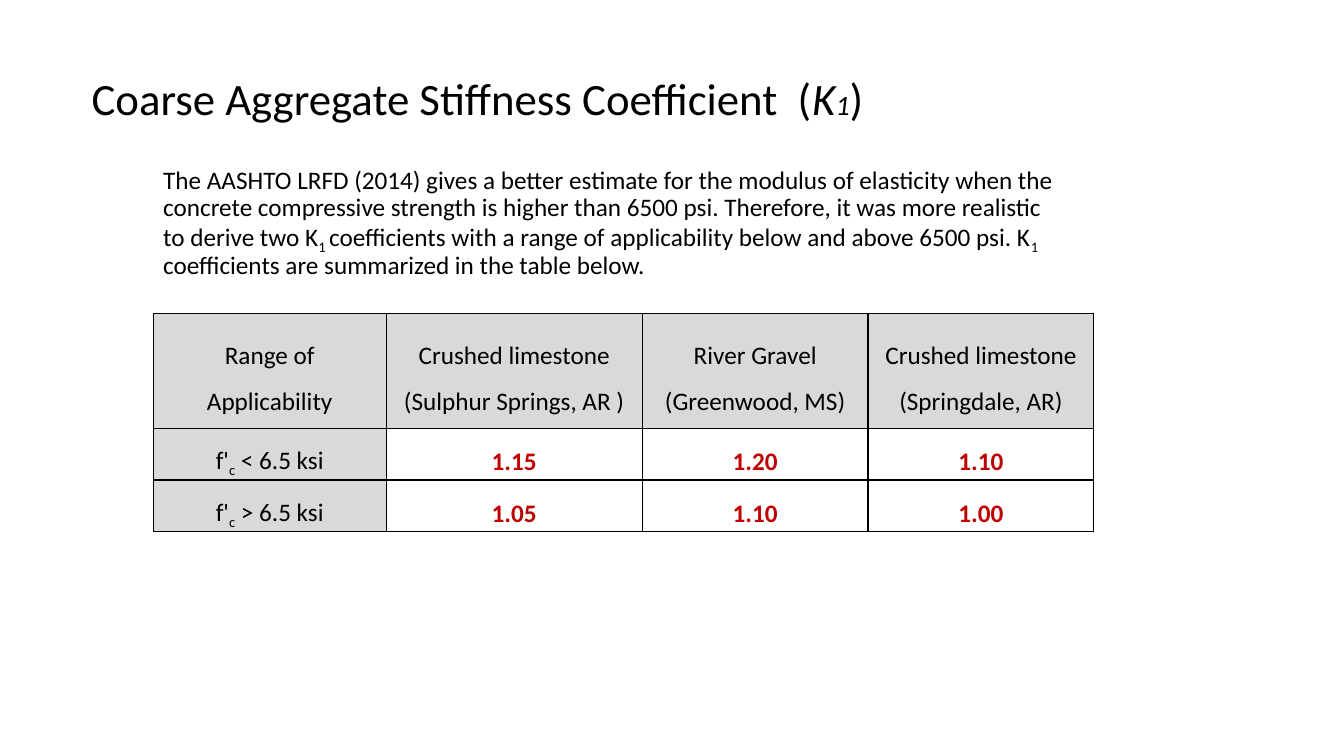
from lxml import etree
from pptx import Presentation
from pptx.dml.color import RGBColor
from pptx.enum.text import MSO_ANCHOR, PP_ALIGN
from pptx.oxml.ns import qn
from pptx.util import Inches, Pt

MIDDLE, TOP = MSO_ANCHOR.MIDDLE, MSO_ANCHOR.TOP
LEFT, CENTER = PP_ALIGN.LEFT, PP_ALIGN.CENTER
BLACK = RGBColor(0x00, 0x00, 0x00)
WHITE = RGBColor(0xFF, 0xFF, 0xFF)
GRAY = RGBColor(0xD9, 0xD9, 0xD9)
RED = RGBColor(0xC0, 0x00, 0x00)
FONT = "Calibri"

# Content: each run is (text, style), style being "", "sub", "italic" or "index"
TITLE = [("Coarse Aggregate Stiffness Coefficient  (", ""), ("K", "italic"),
         ("1", "index"), (")", "")]
BODY = [
    ("The AASHTO LRFD (2014) gives a better estimate for the modulus of "
     "elasticity when the concrete compressive strength is higher than 6500 "
     "psi. Therefore, it was more realistic to derive two K", ""),
    ("1 ", "sub"),
    ("coefficients with a range of applicability below and above 6500 psi. K", ""),
    ("1 ", "sub"),
    ("coefficients are summarized in the table below.", ""),
]
HEADS = ["Range of Applicability", "Crushed limestone (Sulphur Springs, AR )",
         "River Gravel (Greenwood, MS)", "Crushed limestone (Springdale, AR)"]
RANGES = [(" < 6.5 ksi", ["1.15", "1.20", "1.10"]),
          (" > 6.5 ksi", ["1.05", "1.10", "1.00"])]
COLS = [2.31, 2.54, 2.24, 2.24]
ROWS = [1.14, 0.44, 0.44]


def write(frame, runs, size, align=LEFT, gap=0.9, color=BLACK, bold=False):
    para = frame.paragraphs[0]
    para.alignment = align
    para.line_spacing = gap
    for text, style in runs:
        run = para.add_run()
        run.text = text
        font = run.font
        font.name, font.size, font.bold = FONT, Pt(size), bold
        font.color.rgb = color
        font.italic = style in ("italic", "index")
        if style == "index":
            font.size = Pt(20)
        if style == "sub":
            run._r.get_or_add_rPr().set("baseline", "-25000")
    return para


def add_text(slide, box, runs, size, anchor):
    frame = slide.shapes.add_textbox(*map(Inches, box)).text_frame
    frame.word_wrap = True
    frame.vertical_anchor = anchor
    return write(frame, runs, size)


def add_border(cell):
    props = cell._tc.get_or_add_tcPr()
    for pos, side in enumerate(("lnL", "lnR", "lnT", "lnB")):
        line = etree.Element(qn("a:" + side), w=str(Pt(1)))
        fill = etree.SubElement(line, qn("a:solidFill"))
        etree.SubElement(fill, qn("a:srgbClr"), val=str(BLACK))
        props.insert(pos, line)


def fill_cell(cell, runs, shade, color=BLACK, bold=False):
    cell.fill.solid()
    cell.fill.fore_color.rgb = shade
    cell.vertical_anchor = MIDDLE
    cell.margin_left = cell.margin_right = Inches(0.07)
    cell.margin_top = cell.margin_bottom = 0
    write(cell.text_frame, runs, 18, CENTER, 1.5, color, bold)
    add_border(cell)


def main():
    deck = Presentation()
    deck.slide_width, deck.slide_height = Inches(13.33), Inches(7.5)
    slide = deck.slides.add_slide(deck.slide_layouts[6])

    # Title and explanation
    add_text(slide, (0.81, 0.6, 10.94, 0.81), TITLE, 32, MIDDLE)
    body = add_text(slide, (1.52, 1.61, 9.12, 1.31), BODY, 18, TOP)
    body.space_before = Pt(10)

    # Coefficient table
    table = slide.shapes.add_table(
        len(ROWS), len(COLS), Inches(1.52), Inches(3.11),
        Inches(sum(COLS)), Inches(sum(ROWS))).table
    table.first_row = table.horz_banding = False
    for col, width in zip(table.columns, COLS):
        col.width = Inches(width)
    for row, height in zip(table.rows, ROWS):
        row.height = Inches(height)
    for c, head in enumerate(HEADS):
        fill_cell(table.cell(0, c), [(head, "")], GRAY)
    for r, (limit, values) in enumerate(RANGES, 1):
        label = [("f'", ""), ("c", "sub"), (limit, "")]
        fill_cell(table.cell(r, 0), label, GRAY)
        for c, value in enumerate(values, 1):
            fill_cell(table.cell(r, c), [(value, "")], WHITE, RED, True)

    deck.save("out.pptx")


if __name__ == "__main__":
    main()
